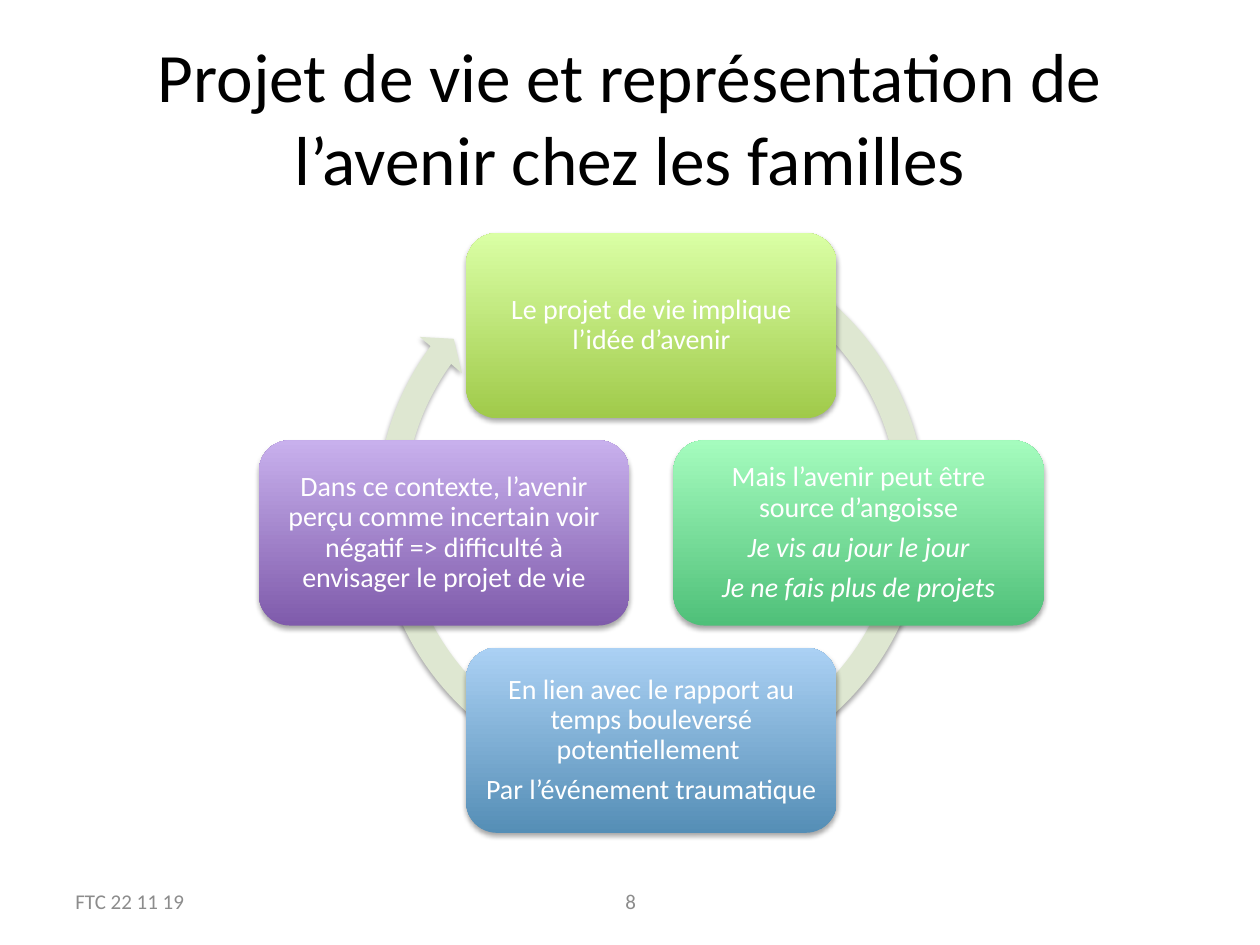
from lxml import etree
from pptx import Presentation
from pptx.dml.color import RGBColor
from pptx.enum.shapes import MSO_SHAPE
from pptx.enum.text import MSO_ANCHOR, PP_ALIGN
from pptx.oxml.ns import qn
from pptx.util import Inches, Pt

ARROW, ROUND = MSO_SHAPE.CIRCULAR_ARROW, MSO_SHAPE.ROUNDED_RECTANGLE
MIDDLE = MSO_ANCHOR.MIDDLE
LEFT, CENTER = PP_ALIGN.LEFT, PP_ALIGN.CENTER
FONT = "Calibri"
HEX = {
    "ink": "000000", "gray": "8C8C8C", "white": "FFFFFF", "ring": "DEE7D1",
    "lime": ("A0CA4A", "DAFFA5"), "green": ("4FC079", "A5FCBE"),
    "blue": ("558EB6", "ABD1F4"), "violet": ("7F5BAB", "C8B0ED"),
}


def style(para, size, color, align):
    para.alignment = align
    para.font.name, para.font.size = FONT, Pt(size)
    para.font.color.rgb = RGBColor.from_string(HEX[color])


def shade(shape):
    """Give the shape a soft shadow below it and no outline."""
    shape.line.fill.background()
    shape.shadow.inherit = False
    effects = shape._element.spPr.find(qn("a:effectLst"))
    outer = etree.SubElement(effects, qn("a:outerShdw"), blurRad=str(Pt(3.1)),
                             dist=str(Pt(1.8)), dir="5400000", rotWithShape="0")
    tone = etree.SubElement(outer, qn("a:srgbClr"), val=HEX["ink"])
    etree.SubElement(tone, qn("a:alpha"), val="35000")


deck = Presentation()
deck.slide_width, deck.slide_height = Inches(10), Inches(7.5)
slide = deck.slides.add_slide(deck.slide_layouts[5])
shapes = slide.shapes

# Title
title = shapes.title
title.left, title.top = Inches(0.5), Inches(0.3)
title.width, title.height = Inches(9), Inches(1.25)
title.text_frame.text = "Projet de vie et représentation de l’avenir chez les familles"
title.text_frame.vertical_anchor = MIDDLE
style(title.text_frame.paragraphs[0], 39.6, "ink", CENTER)

# Footer and slide number
for text, left, width, align in [("FTC 22 11 19", 0.5, 2.33, LEFT), ("8", 3.42, 3.17, CENTER)]:
    box = shapes.add_textbox(Inches(left), Inches(6.95), Inches(width), Inches(0.4))
    frame = box.text_frame
    frame.word_wrap, frame.vertical_anchor = True, MIDDLE
    frame.text = text
    style(frame.paragraphs[0], 12, "gray", align)

# Ring arrow behind the steps
MID_X, MID_Y = 5.17, 4.23
SIZE = 4.58
ring = shapes.add_shape(ARROW, Inches(MID_X - SIZE / 2), Inches(1.75), Inches(SIZE), Inches(SIZE))
for i, value in enumerate([0.047, 2.729, 129.71, 179.363, 0.048]):
    ring.adjustments[i] = value
ring.fill.solid()
ring.fill.fore_color.rgb = RGBColor.from_string(HEX["ring"])
shade(ring)

# Four steps around the centre: column, row, colour, plain lines, italic lines
WIDE, HIGH, STEP = 2.94, 1.47, 1.645
steps = [
    (0, -1, "lime", ["Le projet de vie implique l’idée d’avenir"], []),
    (1, 0, "green", ["Mais l’avenir peut être source d’angoisse"],
     ["Je vis au jour le jour", "Je ne fais plus de projets"]),
    (0, 1, "blue", ["En lien avec le rapport au temps bouleversé potentiellement ",
                    "Par l’événement traumatique"], []),
    (-1, 0, "violet", ["Dans ce contexte, l’avenir perçu comme incertain voir négatif "
                       "=> difficulté à envisager le projet de vie"], []),
]
for col, row, color, plain, slanted in steps:
    card = shapes.add_shape(ROUND, Inches(MID_X + col * STEP - WIDE / 2),
                            Inches(MID_Y + row * STEP - HIGH / 2), Inches(WIDE), Inches(HIGH))
    card.fill.gradient()
    card.fill.gradient_angle = 90
    for stop, tint in zip(card.fill.gradient_stops, HEX[color]):
        stop.color.rgb = RGBColor.from_string(tint)
    shade(card)

    frame = card.text_frame
    frame.word_wrap, frame.vertical_anchor = True, MIDDLE
    frame.margin_left = frame.margin_right = Inches(0.07)
    frame.margin_top = frame.margin_bottom = Inches(0.07)
    frame.text = "\n".join(plain + slanted)
    for i, para in enumerate(frame.paragraphs):
        style(para, 16, "white", CENTER)
        para.line_spacing, para.space_after = 0.9, Pt(5.6)
        if i >= len(plain):
            para.font.italic = True

deck.save("out.pptx")
